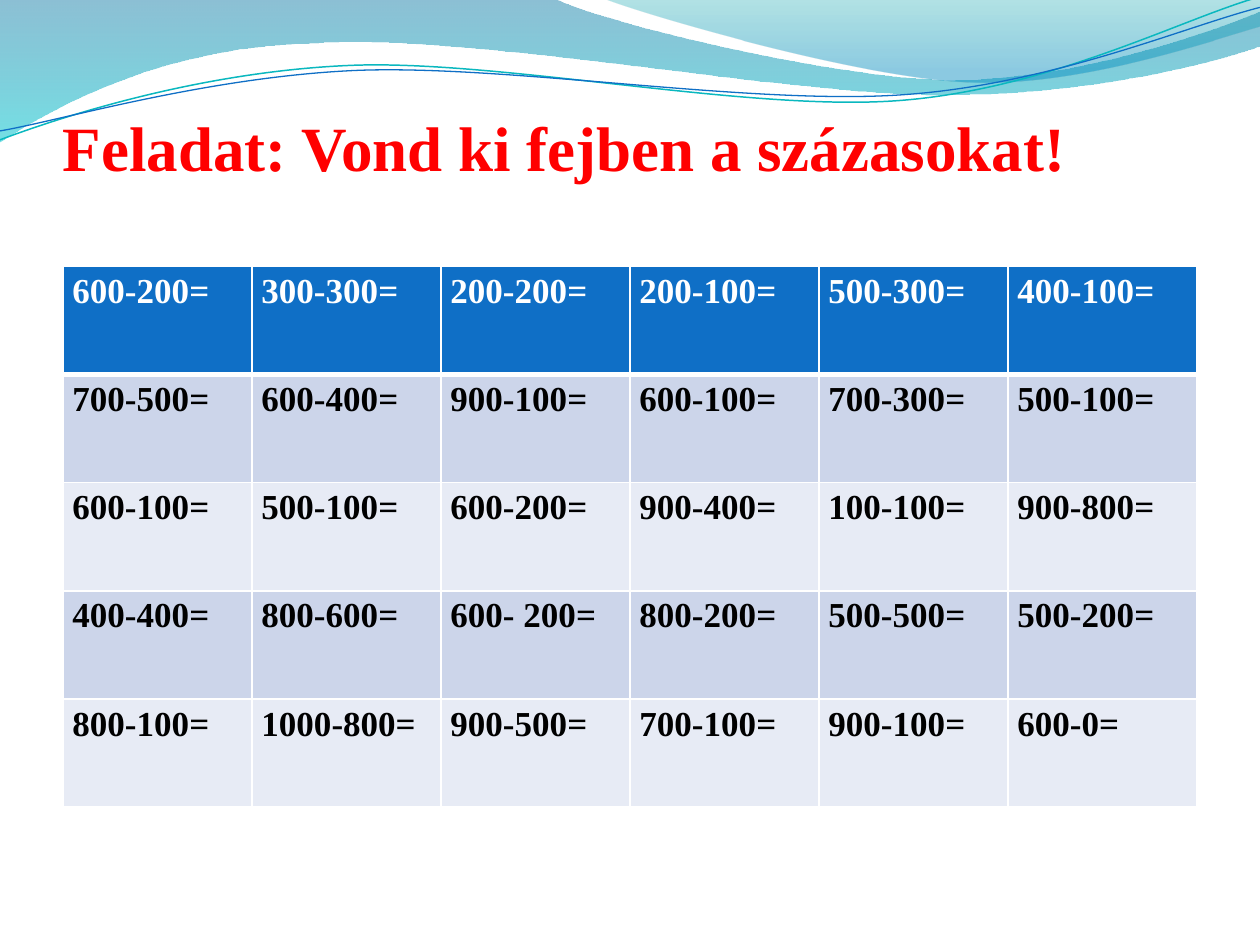
import itertools

import pptx
import pptx.dml.color
import pptx.enum.text
import pptx.oxml
import pptx.oxml.ns
import pptx.util

Cm = pptx.util.Cm
Pt = pptx.util.Pt
RGBColor = pptx.dml.color.RGBColor
qn = pptx.oxml.ns.qn
DRAWING = pptx.oxml.ns.nsdecls("a")

FONT = "Times New Roman"
RED = RGBColor(0xFF, 0x00, 0x00)
BLACK = RGBColor(0x00, 0x00, 0x00)
WHITE = RGBColor(0xFF, 0xFF, 0xFF)
BLUE = RGBColor(0x0F, 0x6F, 0xC6)
TEAL = RGBColor(0x0A, 0xB8, 0xBF)
DARK_BAND = RGBColor(0xCC, 0xD5, 0xEA)
LIGHT_BAND = RGBColor(0xE7, 0xEB, 0xF5)
WAVE_STOPS = [(0, RGBColor(0x00, 0x74, 0xA1), 45), (1, RGBColor(0x00, 0xC6, 0xCF), 55)]
CREST_STOPS = [(0, RGBColor(0x00, 0xA1, 0xA9), 30), (0.8, RGBColor(0x00, 0x8B, 0xBF), 45)]

WAVE = [
    [(0, 0)],
    [(11.18, -0.03)],
    [(12.09, 0.43), (16.87, 1.6), (19.25, 1.6)],
    [(21.67, 1.6), (24.33, 0.66), (25.4, 0.23)],
    [(25.43, 0.91)],
    [(24.97, 1.12), (22.1, 1.93), (18.95, 1.91)],
    [(15.8, 1.91), (9.7, 0.71), (6.53, 0.86)],
    [(3.28, 0.91), (1.17, 2.11), (-0.03, 2.87)],
]
CREST = [
    [(12.17, -0.03)],
    [(12.93, 0.28), (17.32, 1.57), (19.53, 1.65)],
    [(21.74, 1.75), (24.41, 0.81), (25.4, 0.53)],
    [(25.4, 0)],
]
TEAL_STRAND = [
    [(0, 2.82)],
    [(1.22, 2.36), (4.01, 1.45), (7.04, 1.32)],
    [(10.03, 1.19), (15.06, 2.26), (18.11, 2.03)],
    [(21.16, 1.8), (23.83, 0.38), (25.35, -0.05)],
]
BLUE_STRAND = [
    [(0, 2.64)],
    [(1.19, 2.44), (4.17, 1.55), (7.19, 1.42)],
    [(10.24, 1.3), (15.16, 2.13), (18.21, 1.91)],
    [(21.23, 1.7), (23.9, 0.53), (25.4, 0.15)],
]

TITLE = "Feladat: Vond ki fejben a százasokat!"
EXERCISES = [
    ["600-200=", "300-300=", "200-200=", "200-100=", "500-300=", "400-100="],
    ["700-500=", "600-400=", "900-100=", "600-100=", "700-300=", "500-100="],
    ["600-100=", "500-100=", "600-200=", "900-400=", "100-100=", "900-800="],
    ["400-400=", "800-600=", "600- 200=", "800-200=", "500-500=", "500-200="],
    ["800-100=", "1000-800=", "900-500=", "700-100=", "900-100=", "600-0="],
]


def bend(shape, segments):
    """Turn each run of three straight steps of a segment into one curve."""
    steps = iter(list(shape.element.iter(qn("a:lnTo"))))
    for segment in segments[1:]:
        group = list(itertools.islice(steps, len(segment)))
        if len(group) == 3:
            curve = pptx.oxml.parse_xml(f"<a:cubicBezTo {DRAWING}/>")
            group[0].addprevious(curve)
            for step in group:
                curve.append(step[0])
                step.getparent().remove(step)


def add_outline(page, box, segments, closed):
    """Draw segments as a curved freeform measured from the corner of the box."""
    points = [(Cm(x), Cm(y)) for x, y in itertools.chain(*segments)]
    builder = page.shapes.build_freeform(*points[0])
    builder.add_line_segments(points[1:], close=closed)
    shape = builder.convert_to_shape(Cm(box[0]), Cm(box[1]))
    shape.shadow.inherit = False
    bend(shape, segments)
    return shape


def add_banner(page, box):
    """Draw the translucent waves and the two strands over them."""
    for segments, stops in ((WAVE, WAVE_STOPS), (CREST, CREST_STOPS)):
        shape = add_outline(page, box, segments, True)
        shape.line.fill.background()
        shape.fill.gradient()
        shape.fill.gradient_angle = 270
        for stop, (position, color, opacity) in zip(shape.fill.gradient_stops, stops):
            stop.position = position
            stop.color.rgb = color
        tones = shape.element.spPr.iter(qn("a:srgbClr"))
        for tone, (position, color, opacity) in zip(tones, stops):
            tone.append(pptx.oxml.parse_xml(f'<a:alpha {DRAWING} val="{opacity * 1000}"/>'))
    for segments, color, width in ((TEAL_STRAND, TEAL, 0.85), (BLUE_STRAND, BLUE, 0.75)):
        strand = add_outline(page, box, segments, False)
        strand.fill.background()
        strand.line.color.rgb = color
        strand.line.width = Pt(width)


def style_text(para, size, color):
    """Set the bold face, size and colour of every run."""
    for span in para.runs:
        span.font.name = FONT
        span.font.size = Pt(size)
        span.font.bold = True
        span.font.color.rgb = color


def add_title(page, box):
    """Write the heading one line above the bottom of the box."""
    frame = page.shapes.add_textbox(*map(Cm, box)).text_frame
    frame.word_wrap = True
    frame.vertical_anchor = pptx.enum.text.MSO_ANCHOR.BOTTOM
    frame.margin_left = frame.margin_right = 0
    frame.margin_top = Cm(0.13)
    frame.margin_bottom = Cm(1.46)
    frame.text = TITLE
    style_text(frame.paragraphs[0], 36, RED)


def add_borders(cell, widths):
    """Give a cell white borders of the given widths in points."""
    properties = cell._tc.get_or_add_tcPr()
    for index, (side, width) in enumerate(widths.items()):
        border = pptx.oxml.parse_xml(
            f'<a:ln{side} {DRAWING} w="{Pt(width)}">'
            f'<a:solidFill><a:srgbClr val="{WHITE}"/></a:solidFill></a:ln{side}>')
        properties.insert(index, border)


def add_exercises(page, box):
    """Fill the box with an even grid of subtractions."""
    rows, columns = len(EXERCISES), len(EXERCISES[0])
    table = page.shapes.add_table(rows, columns, *map(Cm, box)).table
    for column in table.columns:
        column.width = Cm(box[2] / columns)
    for index, texts in enumerate(EXERCISES):
        table.rows[index].height = Cm(box[3] / rows)
        header = index == 0
        band = BLUE if header else DARK_BAND if index % 2 else LIGHT_BAND
        widths = {"L": 1, "R": 1, "T": 3 if index == 1 else 1, "B": 3 if header else 1}
        for cell, text in zip(table.rows[index].cells, texts):
            cell.margin_left = cell.margin_right = Cm(0.19)
            cell.margin_top = cell.margin_bottom = 0
            cell.fill.solid()
            cell.fill.fore_color.rgb = band
            add_borders(cell, widths)
            para = cell.text_frame.paragraphs[0]
            para.text = text
            para.line_spacing = 1.15
            style_text(para, 20, WHITE if header else BLACK)


def main():
    """Build the one-page deck and save it."""
    deck = pptx.Presentation()
    deck.slide_width, deck.slide_height = Cm(25.4), Cm(19.05)
    page = deck.slides.add_slide(deck.slide_layouts[6])
    add_banner(page, (0, 0))
    add_title(page, (1.27, 1.96, 22.86, 3.18))
    add_exercises(page, (1.27, 5.37, 22.86, 10.9))
    deck.save("out.pptx")


if __name__ == "__main__":
    main()
